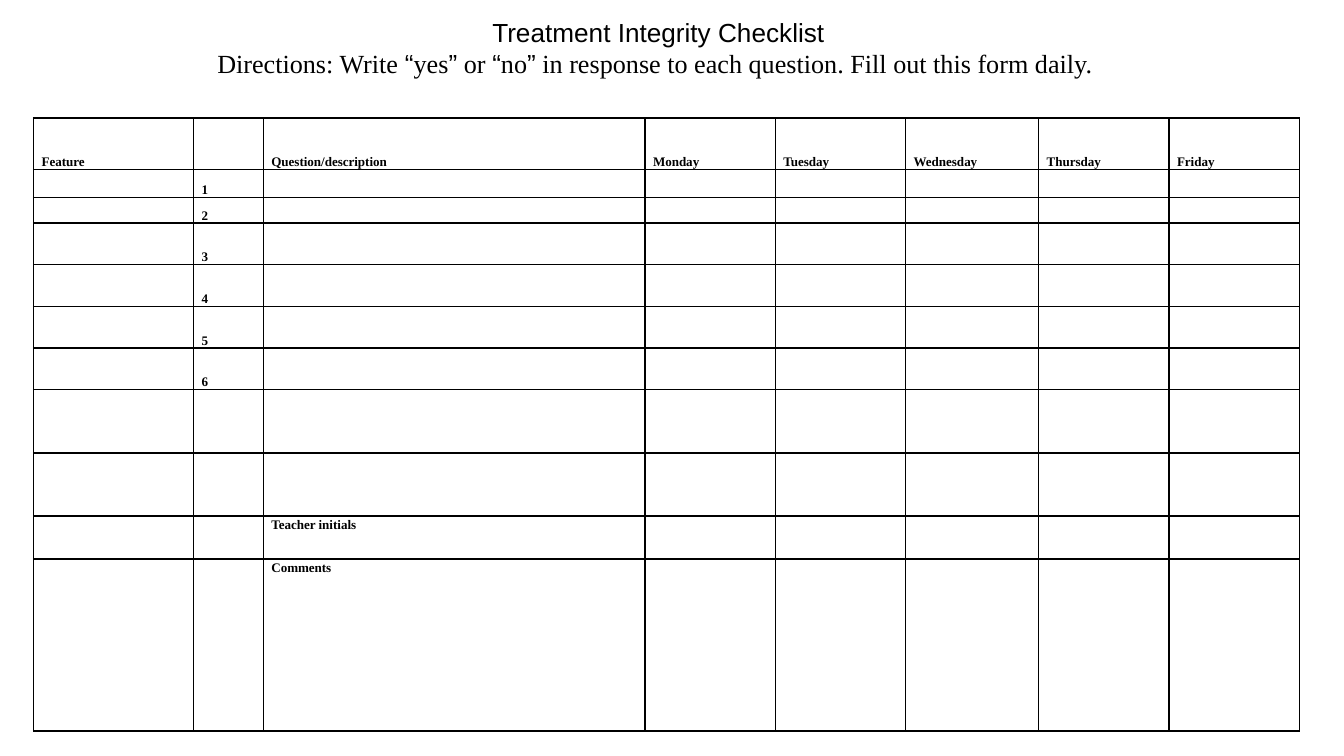
from lxml.etree import SubElement
from pptx import Presentation
from pptx.dml.color import RGBColor
from pptx.enum.text import MSO_ANCHOR, MSO_AUTO_SIZE, PP_ALIGN
from pptx.oxml.ns import qn
from pptx.util import Inches, Pt

COLORS = {"ink": "000000"}
SERIF, SANS = "Times New Roman", "Arial"


def add_run(para, text, face, size, bold=False):
    run = para.add_run()
    run.text = text
    run.font.name = face
    run.font.size = Pt(size)
    run.font.bold = bold
    run.font.color.rgb = RGBColor.from_string(COLORS["ink"])


def add_border(cell):
    """Draw a thin line on all four sides of a table cell."""
    props = cell._tc.get_or_add_tcPr()
    for side in ("a:lnL", "a:lnR", "a:lnT", "a:lnB"):
        line = SubElement(props, qn(side), w=str(Pt(1)))
        fill = SubElement(line, qn("a:solidFill"))
        SubElement(fill, qn("a:srgbClr"), val=COLORS["ink"])


# Widescreen page, 16 to 9
prs = Presentation()
prs.slide_width = Inches(10)
prs.slide_height = Inches(10) * 9 // 16
slide = prs.slides.add_slide(prs.slide_layouts[6])

# Checklist table
widths = [1.19, 0.52, 2.84, 0.97, 0.97, 0.99, 0.97, 0.97]
heights = [0.38, 0.21, 0.19] + [0.31] * 4 + [0.47] * 2 + [0.32, 1.28]
heads = ["Feature", "", "Question/description",
         "Monday", "Tuesday", "Wednesday", "Thursday", "Friday"]
labels = {(0, col): head for col, head in enumerate(heads) if head}
labels.update({(num, 1): str(num) for num in range(1, 7)})
labels.update({(9, 2): "Teacher initials", (10, 2): "Comments"})

frame = slide.shapes.add_table(len(heights), len(widths), Inches(0.25),
                               Inches(0.88), Inches(9.42), Inches(4.56))
table = frame.table
table.first_row = table.horz_banding = False
for col, width in enumerate(widths):
    table.columns[col].width = Inches(width)
for row, height in enumerate(heights):
    table.rows[row].height = Inches(height)
    for col in range(len(widths)):
        cell = table.cell(row, col)
        cell.margin_left = cell.margin_right = Inches(0.06)
        cell.margin_top = cell.margin_bottom = 0
        cell.vertical_anchor = MSO_ANCHOR.BOTTOM if row < 7 else MSO_ANCHOR.TOP
        add_border(cell)
        cell.fill.background()
        para = cell.text_frame.paragraphs[0]
        para.line_spacing = 1.15
        if (row, col) in labels:
            add_run(para, labels[row, col], SERIF, 7, True)
        else:
            # Small empty text keeps the low rows at their height
            SubElement(para._p, qn("a:endParaRPr"), sz="700")

# Title and directions
box = slide.shapes.add_textbox(Inches(1.48), Inches(0.07), Inches(6.84), Inches(0.57))
text = box.text_frame
text.word_wrap = False
text.auto_size = MSO_AUTO_SIZE.SHAPE_TO_FIT_TEXT
text.vertical_anchor = MSO_ANCHOR.MIDDLE
title, guide = text.paragraphs[0], text.add_paragraph()
title.alignment = guide.alignment = PP_ALIGN.CENTER
add_run(title, "Treatment Integrity Checklist", SANS, 14)
parts = ["Directions: Write ", "“", "yes", "”", " or ", "“", "no", "”",
         " in response to each question. Fill out this form daily. "]
for part in parts:
    add_run(guide, part, SANS if part in "“”" else SERIF, 14)

prs.save("out.pptx")
